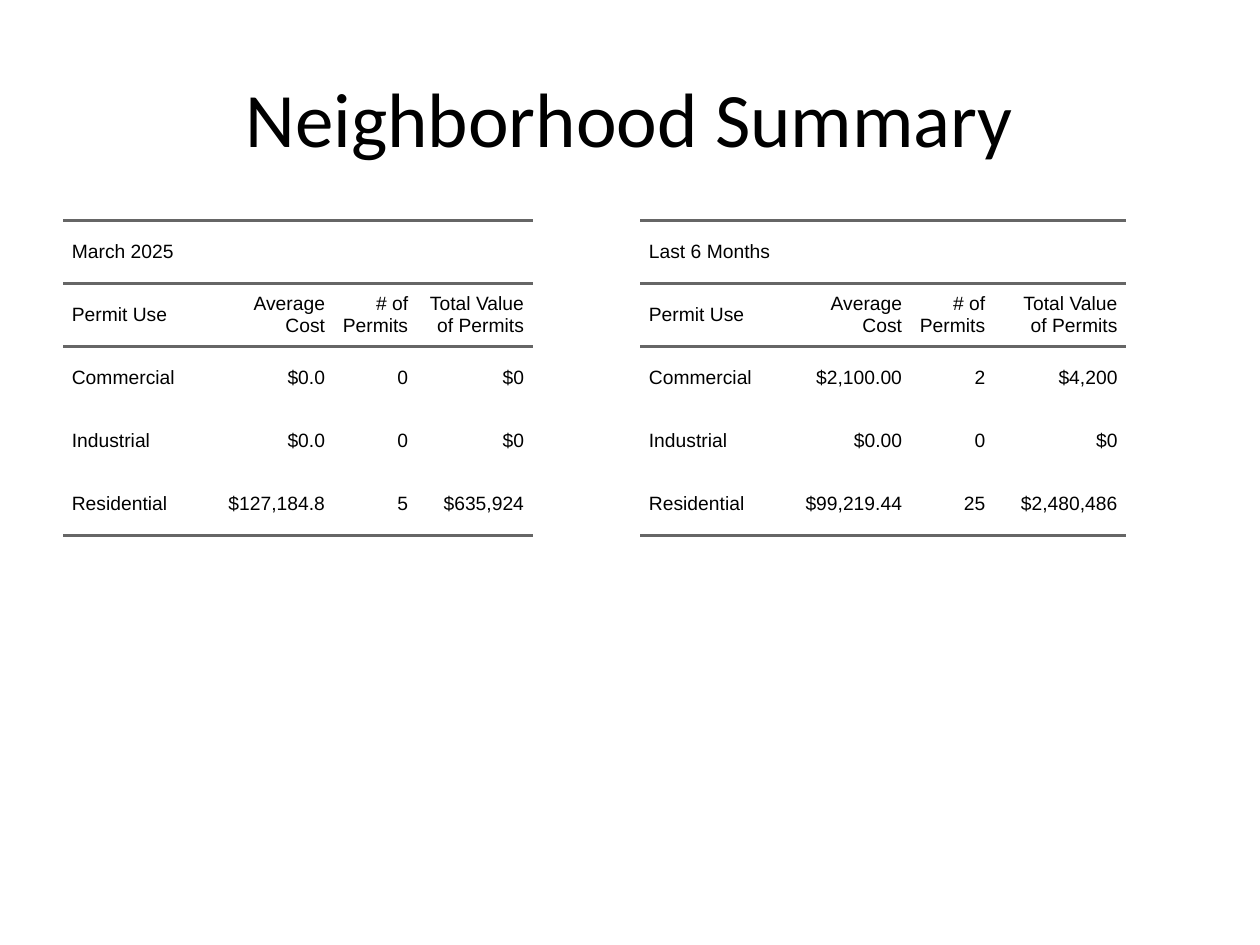
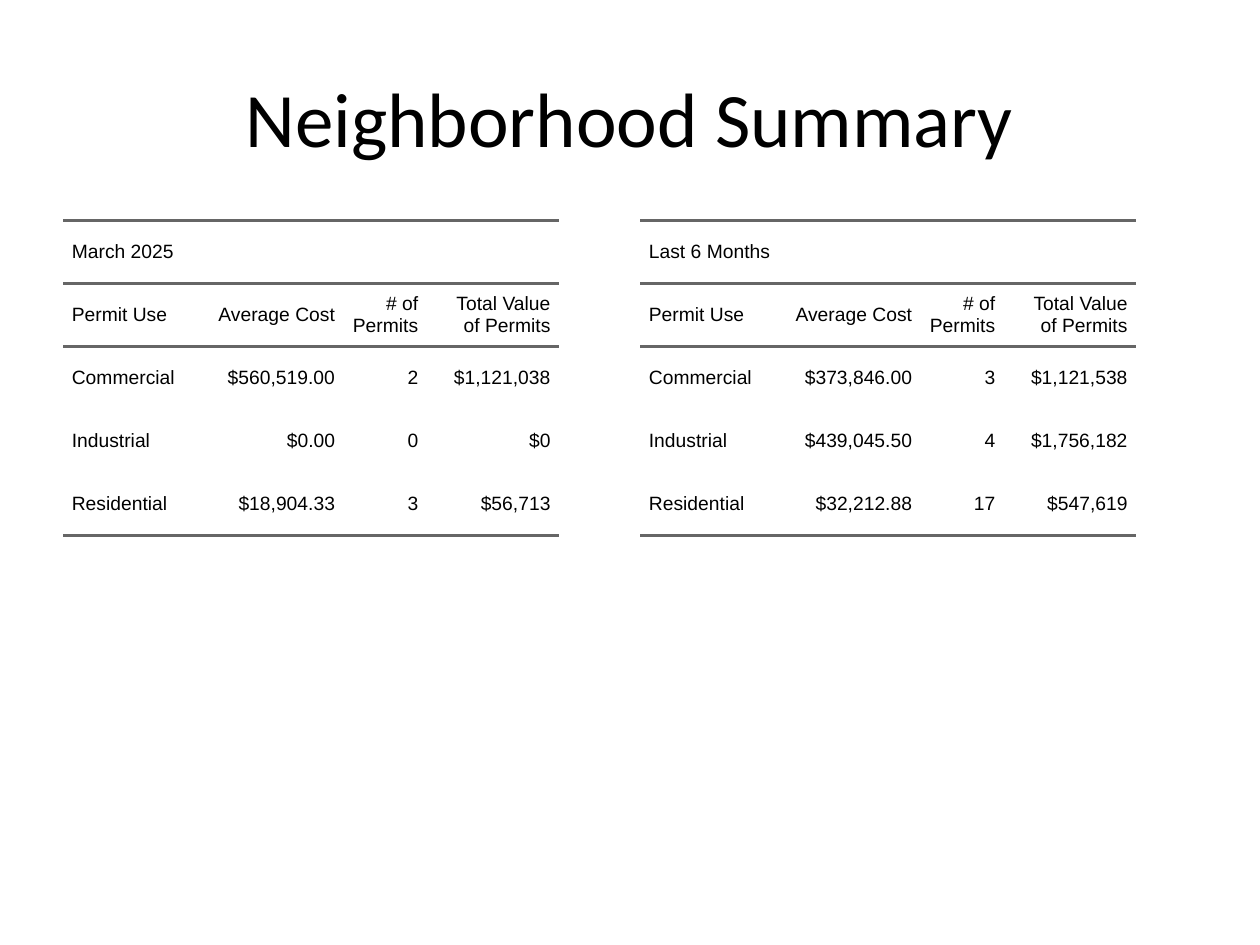
from lxml import etree
from pptx import Presentation
from pptx.dml.color import RGBColor
from pptx.enum import text
from pptx.oxml import ns
from pptx.util import Inches, Pt

COLORS = {"ink": "000000", "rule": "666666"}
TITLE = "Neighborhood Summary"
HEADER = ["Permit Use", "Average Cost", "# of Permits", "Total Value of Permits"]
USES = ["Commercial", "Industrial", "Residential"]
TABLE_LEFTS = [0.5, 5.08]
TABLE_TOP = 1.75
ROW_HEIGHT = 0.5
PADDING = 0.07

SLIDES = [
    [
        ("March 2025", [1.1, 1.05, 0.66, 0.92],
         [("$0.0", "0", "$0"), ("$0.0", "0", "$0"), ("$127,184.8", "5", "$635,924")]),
        ("Last 6 Months", [1.1, 1.05, 0.66, 1.05],
         [("$2,100.00", "2", "$4,200"), ("$0.00", "0", "$0"), ("$99,219.44", "25", "$2,480,486")]),
    ],
    [
        ("March 2025", [1.1, 1.13, 0.66, 1.05],
         [("$560,519.00", "2", "$1,121,038"), ("$0.00", "0", "$0"), ("$18,904.33", "3", "$56,713")]),
        ("Last 6 Months", [1.1, 1.13, 0.66, 1.05],
         [("$373,846.00", "3", "$1,121,538"), ("$439,045.50", "4", "$1,756,182"),
          ("$32,212.88", "17", "$547,619")]),
    ],
]


def add_run(paragraph, words, font_name, size):
    run = paragraph.add_run()
    run.text = words
    run.font.name = font_name
    run.font.size = Pt(size)
    run.font.color.rgb = RGBColor.from_string(COLORS["ink"])


def set_borders(cell, ruled_sides):
    properties = cell._tc.get_or_add_tcPr()
    for side in "LRTB":
        line = etree.SubElement(properties, ns.qn(f"a:ln{side}"))
        if side in ruled_sides:
            line.set("w", str(Pt(1.5)))
            fill = etree.SubElement(line, ns.qn("a:solidFill"))
            etree.SubElement(fill, ns.qn("a:srgbClr"), val=COLORS["rule"])
        else:
            etree.SubElement(line, ns.qn("a:noFill"))


presentation = Presentation()
presentation.slide_width = Inches(10)
presentation.slide_height = Inches(7.5)

for permit_tables in SLIDES:
    slide = presentation.slides.add_slide(presentation.slide_layouts[5])
    title = slide.shapes.title
    title.left, title.top = Inches(0.5), Inches(0.3)
    title.width, title.height = Inches(9), Inches(1.25)
    title.text_frame.vertical_anchor = text.MSO_ANCHOR.MIDDLE
    title_paragraph = title.text_frame.paragraphs[0]
    title_paragraph.alignment = text.PP_ALIGN.CENTER
    add_run(title_paragraph, TITLE, "Calibri", 44)

    for left, (period, widths, figures) in zip(TABLE_LEFTS, permit_tables):
        rows = [[period, "", "", ""], HEADER]
        rows += [[use, *values] for use, values in zip(USES, figures)]
        table = slide.shapes.add_table(
            len(rows), len(widths), Inches(left), Inches(TABLE_TOP),
            Inches(sum(widths)), Inches(ROW_HEIGHT * len(rows))).table
        table.first_row = table.horz_banding = False
        for column, width in zip(table.columns, widths):
            column.width = Inches(width)
        table.cell(0, 0).merge(table.cell(0, len(widths) - 1))

        for row_index, row in enumerate(rows):
            table.rows[row_index].height = Inches(ROW_HEIGHT)
            ruled_sides = "TB" if row_index < 2 else "B" if row_index == len(rows) - 1 else ""
            for column_index, words in enumerate(row):
                cell = table.cell(row_index, column_index)
                cell.margin_left = cell.margin_right = 0
                cell.margin_top = cell.margin_bottom = Inches(PADDING)
                cell.vertical_anchor = text.MSO_ANCHOR.MIDDLE
                set_borders(cell, ruled_sides)
                cell.fill.background()
                if not words:
                    continue
                paragraph = cell.text_frame.paragraphs[0]
                paragraph.alignment = text.PP_ALIGN.RIGHT if column_index else text.PP_ALIGN.LEFT
                paragraph.space_before = paragraph.space_after = Pt(5)
                paragraph_properties = paragraph._p.get_or_add_pPr()
                for margin in ("marL", "marR"):
                    paragraph_properties.set(margin, str(Inches(PADDING)))
                paragraph_properties.set("indent", "0")
                add_run(paragraph, words, "Arial", 11)

presentation.save("out.pptx")
